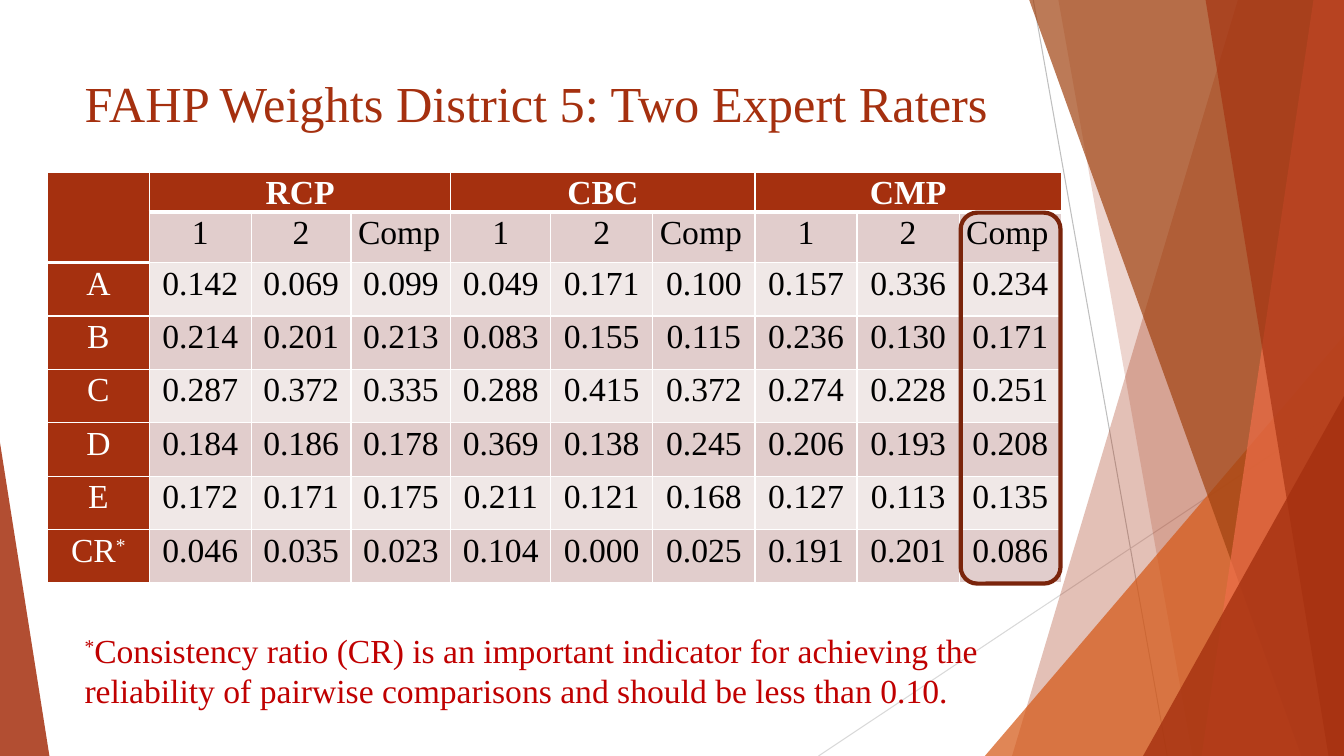
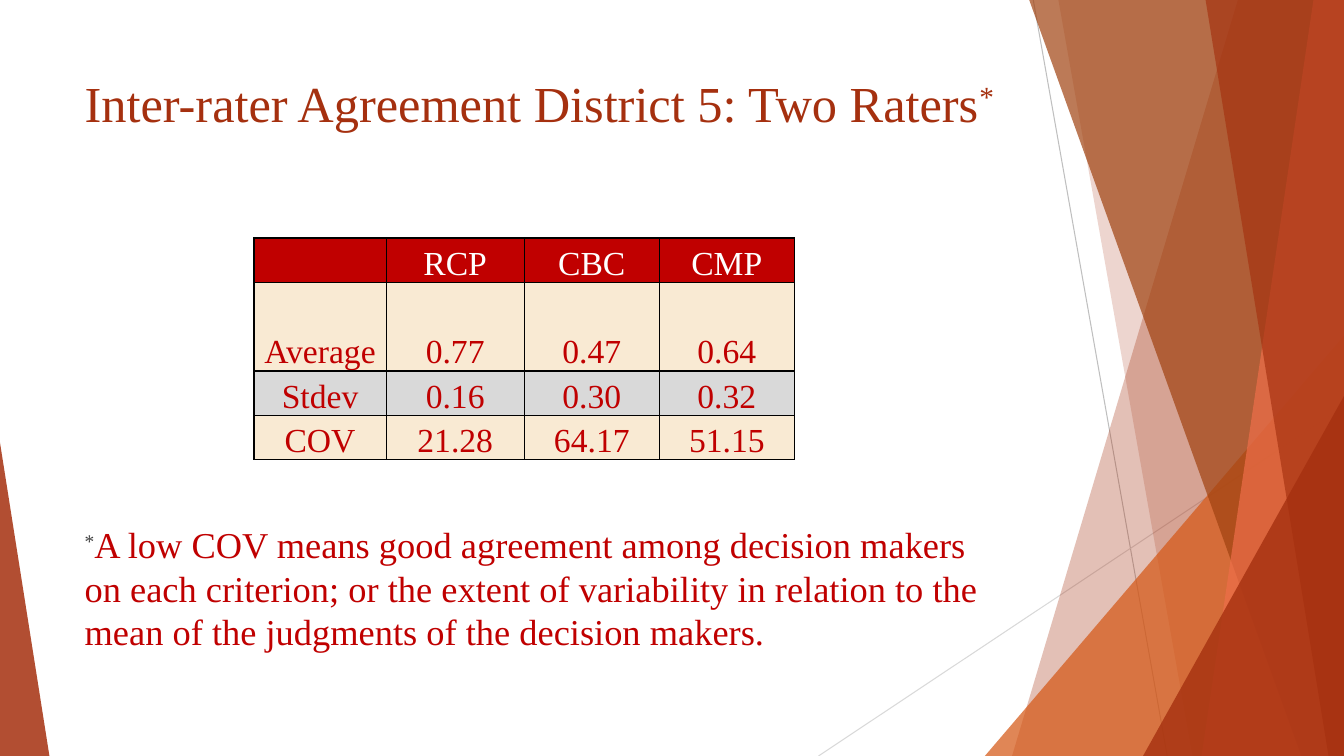
"""Build two slides on fuzzy AHP weights and inter-rater agreement."""
import dataclasses
import itertools

import lxml.etree
import pptx
import pptx.dml.color
import pptx.enum.shapes
import pptx.enum.text
import pptx.oxml.ns
import pptx.presentation
import pptx.shapes.base
import pptx.slide
import pptx.table
import pptx.text.text
import pptx.util

RGBColor = pptx.dml.color.RGBColor
RUST = RGBColor(0xA5, 0x30, 0x0F)
DARK_RUST = RGBColor(0x7A, 0x24, 0x0B)
BROWN = RGBColor(0xA0, 0x42, 0x10)
ORANGE = RGBColor(0xD5, 0x58, 0x16)
CORAL = RGBColor(0xEE, 0x6E, 0x4A)
RED = RGBColor(0xC0, 0x00, 0x00)
ROSE = RGBColor(0xE1, 0xCD, 0xCC)
PALE_ROSE = RGBColor(0xF0, 0xE8, 0xE7)
CREAM = RGBColor(0xF9, 0xEA, 0xD3)
SILVER = RGBColor(0xD9, 0xD9, 0xD9)
GRAY = RGBColor(0xBF, 0xBF, 0xBF)
CHARCOAL = RGBColor(0x40, 0x40, 0x40)
WHITE = RGBColor(0xFF, 0xFF, 0xFF)
BLACK = RGBColor(0x00, 0x00, 0x00)

FONT = "Times New Roman"
SLIDE_WIDTH = pptx.util.Inches(13.33)
SLIDE_HEIGHT = pptx.util.Inches(7.5)
MARGIN = 5.55
TEXT_WIDTH = 70.5


@dataclasses.dataclass(frozen=True)
class Area:
    """A rectangle in percent of the slide."""

    left: float
    top: float
    width: float
    height: float

    def lengths(self) -> tuple[int, int, int, int]:
        return across(self.left), down(self.top), across(self.width), down(self.height)


@dataclasses.dataclass(frozen=True)
class Ray:
    """A thin line between two points."""

    start: tuple[float, float]
    end: tuple[float, float]
    color: RGBColor


@dataclasses.dataclass(frozen=True)
class Shard:
    """A full-height facet that reaches the right edge."""

    top_left: float
    bottom_left: float
    color: RGBColor
    opacity: int


@dataclasses.dataclass(frozen=True)
class Wedge:
    """A right triangle standing on the bottom edge."""

    area: Area
    apex: float
    color: RGBColor
    opacity: int


@dataclasses.dataclass(frozen=True)
class Grid:
    """A table with its sizes in percent and its colours."""

    left: float
    top: float
    columns: tuple[float, ...]
    rows: tuple[float, ...]
    texts: tuple[str, ...]
    head: RGBColor
    bands: tuple[RGBColor, RGBColor]
    ink: RGBColor
    edge: RGBColor
    anchor: pptx.enum.text.MSO_ANCHOR
    head_edge: float = 1
    head_column: bool = False
    bold_head: bool = False
    merges: tuple[tuple[int, int, int, int], ...] = ()


DECOR = (
    Ray((76.88, 0), (86.85, 100), GRAY),
    Ray((100, 53.73), (60.9, 100), SILVER),
    Shard(92.1, 75.3, RUST, 30),
    Shard(78.75, 88.73, RUST, 20),
    Wedge(Area(73.28, 44.4, 26.72, 55.6), 1, ORANGE, 72),
    Shard(76.58, 96.83, BROWN, 70),
    Shard(97.73, 89.4, CORAL, 70),
    Shard(89.7, 98.85, RUST, 65),
    Wedge(Area(85.05, 52.4, 14.95, 47.6), 1, RUST, 80),
    Wedge(Area(0, 58.53, 3.68, 41.47), 0, RUST, 85),
)

WEIGHTS = Grid(
    left=3.53,
    top=22.8,
    columns=(7.58,) * 2 + (7.43,) * 3 + (7.6,) * 5,
    rows=(5.07, 6.67) + (7.07,) * 6,
    texts=(
        "- RCP - - CBC - - CMP - -",
        "- 1 2 Comp 1 2 Comp 1 2 Comp",
        "A 0.142 0.069 0.099 0.049 0.171 0.100 0.157 0.336 0.234",
        "B 0.214 0.201 0.213 0.083 0.155 0.115 0.236 0.130 0.171",
        "C 0.287 0.372 0.335 0.288 0.415 0.372 0.274 0.228 0.251",
        "D 0.184 0.186 0.178 0.369 0.138 0.245 0.206 0.193 0.208",
        "E 0.172 0.171 0.175 0.211 0.121 0.168 0.127 0.113 0.135",
        "CR* 0.046 0.035 0.023 0.104 0.000 0.025 0.191 0.201 0.086",
    ),
    head=RUST,
    bands=(PALE_ROSE, ROSE),
    ink=BLACK,
    edge=WHITE,
    anchor=pptx.enum.text.MSO_ANCHOR.TOP,
    head_edge=3,
    head_column=True,
    bold_head=True,
    merges=((0, 0, 1, 0), (0, 1, 0, 3), (0, 4, 0, 6), (0, 7, 0, 9)),
)

AGREEMENT = Grid(
    left=18.9,
    top=31.47,
    columns=(9.83, 10.28, 10.05, 10.05),
    rows=(5.87, 11.73, 5.87, 5.87),
    texts=(
        "- RCP CBC CMP",
        "Average 0.77 0.47 0.64",
        "Stdev 0.16 0.30 0.32",
        "COV 21.28 64.17 51.15",
    ),
    head=RED,
    bands=(SILVER, CREAM),
    ink=RED,
    edge=BLACK,
    anchor=pptx.enum.text.MSO_ANCHOR.BOTTOM,
)


def across(percent: float) -> int:
    return round(SLIDE_WIDTH * percent / 100)


def down(percent: float) -> int:
    return round(SLIDE_HEIGHT * percent / 100)


def write(para: pptx.text.text._Paragraph, text: str, size: float, color: RGBColor, bold: bool = False) -> None:
    for piece in filter(None, text.partition("*")):
        span = para.add_run()
        span.text = piece
        span.font.name = FONT
        span.font.size = pptx.util.Pt(size)
        span.font.bold = bold
        span.font.color.rgb = color
        if piece == "*":
            span.font._element.set("baseline", "30000")


def paint(shape: pptx.shapes.base.BaseShape, color: RGBColor, opacity: int) -> None:
    shape.shadow.inherit = False
    shape.line.fill.background()
    shape.fill.solid()
    shape.fill.fore_color.rgb = color
    swatch = shape.element.spPr.find(".//" + pptx.oxml.ns.qn("a:srgbClr"))
    lxml.etree.SubElement(swatch, pptx.oxml.ns.qn("a:alpha"), val=str(opacity * 1000))


def draw_ray(page: pptx.slide.Slide, ray: Ray) -> None:
    (left, top), (right, bottom) = ray.start, ray.end
    line = page.shapes.add_connector(
        pptx.enum.shapes.MSO_CONNECTOR.STRAIGHT, across(left), down(top), across(right), down(bottom)
    )
    line.line.color.rgb = ray.color
    line.line.width = pptx.util.Pt(0.75)
    lxml.etree.SubElement(line.element.spPr, pptx.oxml.ns.qn("a:effectLst"))


def draw_shard(page: pptx.slide.Slide, shard: Shard) -> None:
    outline = page.shapes.build_freeform(across(shard.top_left), 0)
    corners = ((100, 0), (100, 100), (shard.bottom_left, 100))
    outline.add_line_segments([(across(x), down(y)) for x, y in corners])
    paint(outline.convert_to_shape(), shard.color, shard.opacity)


def draw_wedge(page: pptx.slide.Slide, wedge: Wedge) -> None:
    triangle = page.shapes.add_shape(pptx.enum.shapes.MSO_SHAPE.ISOSCELES_TRIANGLE, *wedge.area.lengths())
    triangle.adjustments[0] = wedge.apex
    paint(triangle, wedge.color, wedge.opacity)


def decorate_master(deck: pptx.presentation.Presentation, page: pptx.slide.Slide) -> None:
    painters = {Ray: draw_ray, Shard: draw_shard, Wedge: draw_wedge}
    content = len(page.shapes)
    for part in DECOR:
        painters[type(part)](page, part)
    tree = deck.slide_master.shapes.element
    for index, shape in enumerate(list(page.shapes)[content:]):
        identity = shape.element[0][0]
        identity.set("id", str(100 + index))
        tree.insert(2 + index, shape.element)


def add_page(deck: pptx.presentation.Presentation, layout: int, title: str) -> pptx.slide.Slide:
    page = deck.slides.add_slide(deck.slide_layouts[layout])
    box = page.shapes.title
    box.left, box.top, box.width, box.height = Area(MARGIN, 8.93, TEXT_WIDTH, 19.2).lengths()
    box.text_frame.vertical_anchor = pptx.enum.text.MSO_ANCHOR.TOP
    box.text_frame.auto_size = pptx.enum.text.MSO_AUTO_SIZE.NONE
    para = box.text_frame.paragraphs[0]
    para.alignment = pptx.enum.text.PP_ALIGN.LEFT
    write(para, title, 36, RUST)
    return page


def set_borders(cell: pptx.table._Cell, color: RGBColor, top: float, bottom: float) -> None:
    properties = cell._tc.get_or_add_tcPr()
    for side, weight in (("L", 1), ("R", 1), ("T", top), ("B", bottom)):
        border = lxml.etree.SubElement(
            properties, pptx.oxml.ns.qn("a:ln" + side), w=str(int(pptx.util.Pt(weight)))
        )
        fill = lxml.etree.SubElement(border, pptx.oxml.ns.qn("a:solidFill"))
        lxml.etree.SubElement(fill, pptx.oxml.ns.qn("a:srgbClr"), val=str(color))


def add_grid(page: pptx.slide.Slide, grid: Grid) -> None:
    area = Area(grid.left, grid.top, sum(grid.columns), sum(grid.rows))
    table = page.shapes.add_table(len(grid.rows), len(grid.columns), *area.lengths()).table
    table.first_row = table.horz_banding = False
    for column, width in zip(table.columns, grid.columns):
        column.width = across(width)
    for row, height in zip(table.rows, grid.rows):
        row.height = down(height)
    texts = [line.split() for line in grid.texts]
    for r, c in itertools.product(range(len(grid.rows)), range(len(grid.columns))):
        cell, text = table.cell(r, c), texts[r][c]
        depth = 2 if grid.head_column and c == 0 else 1
        is_head = r == 0 or (grid.head_column and c == 0)
        set_borders(
            cell, grid.edge, grid.head_edge if r == depth else 1, grid.head_edge if r < depth else 1
        )
        cell.fill.solid()
        cell.fill.fore_color.rgb = grid.head if is_head else grid.bands[r % 2]
        cell.margin_left = cell.margin_right = pptx.util.Inches(0.07)
        cell.margin_top = cell.margin_bottom = 0
        cell.vertical_anchor = grid.anchor
        if text != "-":
            para = cell.text_frame.paragraphs[0]
            para.line_spacing = 1.07
            align = pptx.enum.text.PP_ALIGN
            para.alignment = align.LEFT if text == "Comp" else align.CENTER
            write(para, text, 24, WHITE if is_head else grid.ink, grid.bold_head and r == 0)
    for top, left, bottom, right in grid.merges:
        table.cell(top, left).merge(table.cell(bottom, right))


def add_weights_page(deck: pptx.presentation.Presentation) -> None:
    page = add_page(deck, 5, "FAHP Weights District 5: Two Expert Raters")
    decorate_master(deck, page)
    add_grid(page, WEIGHTS)
    note = page.shapes.add_textbox(*Area(MARGIN, 82.67, 73.35, 12.13).lengths())
    note.text_frame.word_wrap = True
    write(
        note.text_frame.paragraphs[0],
        "*Consistency ratio (CR) is an important indicator for achieving the reliability of "
        "pairwise comparisons and should be less than 0.10.",
        24,
        RED,
    )
    highlight = page.shapes.add_shape(
        pptx.enum.shapes.MSO_SHAPE.ROUNDED_RECTANGLE, *Area(71.48, 28.13, 7.43, 49.07).lengths()
    )
    highlight.shadow.inherit = False
    highlight.fill.background()
    highlight.line.color.rgb = DARK_RUST
    highlight.line.width = pptx.util.Pt(3)


def add_agreement_page(deck: pptx.presentation.Presentation) -> None:
    page = add_page(deck, 1, "Inter-rater Agreement District 5: Two Raters*")
    body = page.placeholders[1]
    body.left, body.top, body.width, body.height = Area(MARGIN, 68.4, TEXT_WIDTH, 29.33).lengths()
    body.text_frame.auto_size = pptx.enum.text.MSO_AUTO_SIZE.NONE
    para = body.text_frame.paragraphs[0]
    para.space_before = pptx.util.Pt(0)
    properties = para._p.get_or_add_pPr()
    properties.set("marL", "0")
    properties.set("indent", "0")
    lxml.etree.SubElement(properties, pptx.oxml.ns.qn("a:buNone"))
    write(
        para,
        "*A low COV means good agreement among decision makers on each criterion; or the extent "
        "of variability in relation to the mean of the judgments of the decision makers.",
        26,
        RED,
    )
    para.runs[0].font.size = pptx.util.Pt(24)
    para.runs[0].font.color.rgb = CHARCOAL
    add_grid(page, AGREEMENT)


def main() -> None:
    deck = pptx.Presentation()
    deck.slide_width, deck.slide_height = SLIDE_WIDTH, SLIDE_HEIGHT
    add_weights_page(deck)
    add_agreement_page(deck)
    deck.save("out.pptx")


if __name__ == "__main__":
    main()
